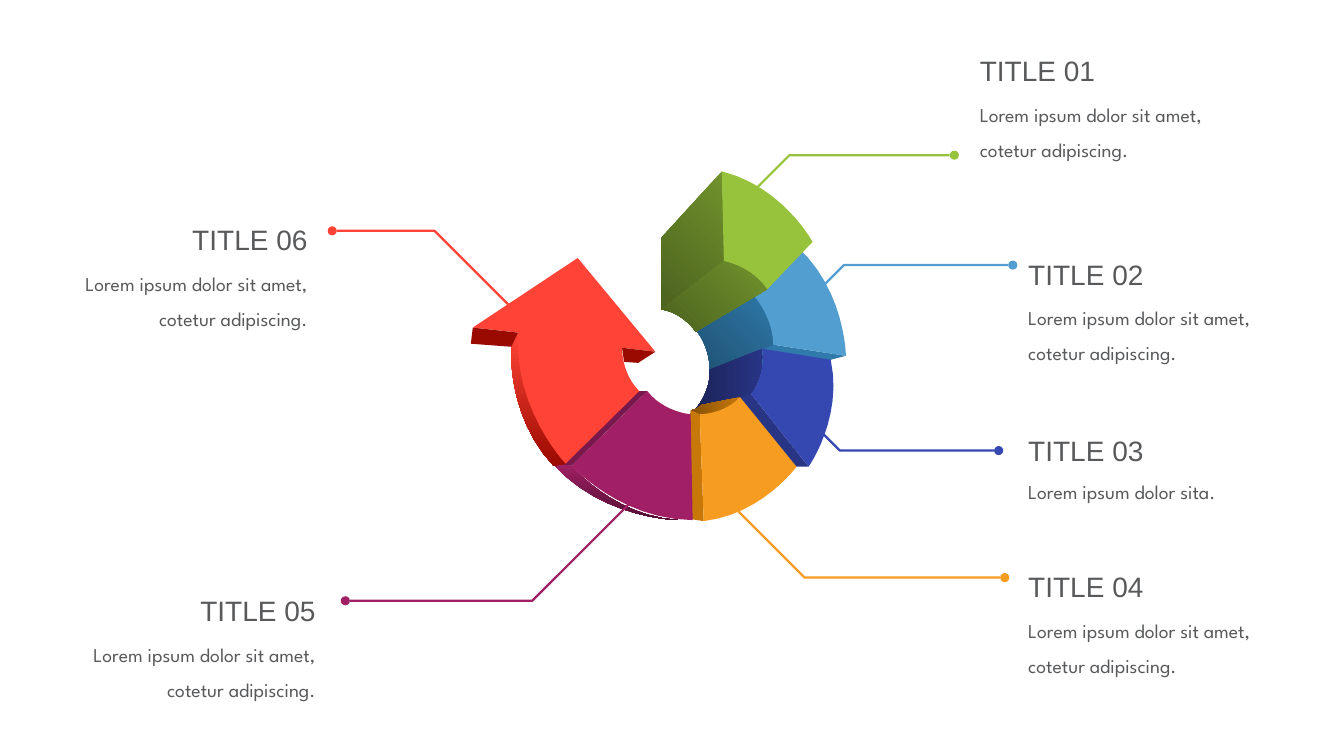
from math import copysign, hypot

from pptx import Presentation
from pptx.dml.color import RGBColor
from pptx.enum.shapes import MSO_SHAPE
from pptx.enum.text import MSO_ANCHOR, PP_ALIGN
from pptx.util import Cm, Pt

GREEN = RGBColor.from_string("97C33C")
GREEN_SHADE = RGBColor.from_string("71922D")
GREEN_DEEP = RGBColor.from_string("4C621E")
SKY = RGBColor.from_string("539ED0")
SKY_SHADE = RGBColor.from_string("2F7AAB")
SKY_DEEP = RGBColor.from_string("1F5172")
BLUE = RGBColor.from_string("3547B1")
BLUE_SHADE = RGBColor.from_string("283585")
BLUE_DEEP = RGBColor.from_string("1B2358")
ORANGE = RGBColor.from_string("F59C21")
ORANGE_SHADE = RGBColor.from_string("C87809")
ORANGE_DEEP = RGBColor.from_string("855006")
PURPLE = RGBColor.from_string("A12065")
PURPLE_SHADE = RGBColor.from_string("79184C")
PURPLE_DEEP = RGBColor.from_string("511033")
RED = RGBColor.from_string("FF4437")
RED_DEEP = RGBColor.from_string("9B0A00")
GREY = RGBColor.from_string("58595B")

RING_CENTER = (6.65, 3.65)
BULGE = 0.22
CURVE_STEPS = 12
DOT = 0.09
TEXT_WIDTH = 2.7
TITLE_HEIGHT = 0.59
BODY_HEIGHT = 0.68
TOP, WELL, FLOOR, WALL = "ab~cd~a", "ae~fd~a", "abge", "fdcg"
DOWN, DIAGONAL, LEFTWARD = 90, 135, 180
LOREM = "Lorem ipsum dolor sit amet, cotetur adipiscing."
SHORT_LOREM = "Lorem ipsum dolor sita."

RING = [
    ([(7.67, 3.42), (8.39, 3.53), (7.9, 2.44), (7.41, 2.86),
      (7.04, 3.67), (6.87, 3.24), (7.03, 3.89)],
     [(FLOOR, SKY_SHADE), (WELL, SKY_SHADE, SKY_DEEP, DIAGONAL), (TOP, SKY)]),
    ([(7.45, 3.91), (8.02, 4.63), (8.24, 3.57), (7.56, 3.46),
      (6.88, 4.08), (7.04, 3.67), (7.26, 4.63)],
     [(FLOOR, BLUE_SHADE), (WELL, BLUE_SHADE, BLUE_DEEP, LEFTWARD), (TOP, BLUE)]),
    ([(7.34, 3.94), (7.9, 4.63), (6.98, 5.17), (6.94, 4.11),
      (6.95, 4.02), (6.85, 4.07), (6.72, 5.13)],
     [(WELL, ORANGE_SHADE, ORANGE_DEEP, LEFTWARD), (WALL, ORANGE_SHADE), (TOP, ORANGE)]),
    ([(6.42, 3.88), (5.67, 4.62), (6.87, 5.16), (6.85, 4.11),
      (5.48, 4.6), (6.31, 3.88), (6.73, 5.16)],
     [(TOP, PURPLE), ("g~eb~g", PURPLE, PURPLE_DEEP, DOWN), ("ebaf", PURPLE_SHADE)]),
    ([(6.34, 3.88), (5.61, 4.6), (5.14, 3.3), (6.17, 3.45),
      (5.07, 3.44), (5.49, 4.62), (4.67, 3.41),
      (4.69, 3.25), (5.73, 2.56), (6.5, 3.49), (6.33, 3.6), (6.19, 3.59)],
     [("ce~fb~c", RED, RED_DEEP, DOWN), ("ab~chijd~a", RED),
      ("djkl", RED_DEEP), ("hgec", RED_DEEP)]),
    ([(7.61, 2.87), (8.06, 2.4), (7.16, 1.7), (7.18, 2.59),
      (6.9, 3.29), (6.56, 3.07), (6.56, 2.36)],
     [(WALL, GREEN_SHADE, GREEN_DEEP, DIAGONAL),
      (WELL, GREEN_SHADE, GREEN_DEEP, DIAGONAL), (TOP, GREEN)]),
]

CALLOUTS = [
    (LOREM, GREEN, (7.49, 1.88), (9.42, 1.54), (9.62, 0.32)),
    (LOREM, SKY, (7.95, 3.05), (10, 2.63), (10.1, 2.34)),
    (SHORT_LOREM, BLUE, (7.91, 4.05), (9.86, 4.47), (10.1, 4.09)),
    (LOREM, ORANGE, (7.17, 4.92), (9.92, 5.73), (10.1, 5.44)),
    (LOREM, PURPLE, (6.33, 4.91), (3.47, 5.96), (0.53, 5.68)),
    (LOREM, RED, (5.12, 3.1), (3.34, 2.29), (0.45, 2)),
]


def length(inches):
    return Cm(inches * 2.54)


def bend(start, end):
    (x1, y1), (x2, y2) = start, end
    mid_x, mid_y = (x1 + x2) / 2, (y1 + y2) / 2
    normal_x, normal_y = y2 - y1, x1 - x2
    outward = normal_x * (mid_x - RING_CENTER[0]) + normal_y * (mid_y - RING_CENTER[1])
    reach = copysign(BULGE, outward)
    control = (mid_x + reach * normal_x, mid_y + reach * normal_y)
    for step in range(1, CURVE_STEPS + 1):
        t = step / CURVE_STEPS
        weights = ((1 - t) ** 2 * (1 + 2 * t), 3 * t ** 2 * (1 - t), t ** 3)
        yield tuple(sum(w * v for w, v in zip(weights, axis))
                    for axis in zip(start, control, end))


def trace(edges, corners):
    outline, curved = [], False
    for mark in edges:
        if mark == "~":
            curved = True
            continue
        corner = corners[ord(mark) - ord("a")]
        outline.extend(bend(outline[-1], corner) if curved else [corner])
        curved = False
    return outline


def add_outline(slide, outline, close):
    points = [(length(x), length(y)) for x, y in outline]
    builder = slide.shapes.build_freeform(*points[0])
    builder.add_line_segments(points[1:], close=close)
    shape = builder.convert_to_shape()
    shape.shadow.inherit = False
    return shape


def add_facet(slide, corners, edges, color, deep=None, angle=0):
    facet = add_outline(slide, trace(edges, corners), True)
    facet.line.fill.background()
    if deep is None:
        facet.fill.solid()
        facet.fill.fore_color.rgb = color
    else:
        facet.fill.gradient()
        facet.fill.gradient_angle = 360 - angle
        for stop, shade in zip(facet.fill.gradient_stops, (color, deep)):
            stop.color.rgb = shade
    return facet


def add_leader(slide, color, start, end):
    direction = copysign(1, end[0] - start[0])
    knee = (start[0] + direction * abs(end[1] - start[1]), end[1])
    leader = add_outline(slide, [start, knee, end], False)
    leader.fill.background()
    leader.line.color.rgb = color
    leader.line.width = Pt(1.6)
    center_x = end[0] + direction * DOT / 2
    dot = slide.shapes.add_shape(
        MSO_SHAPE.OVAL, length(center_x - DOT / 2), length(end[1] - DOT / 2),
        length(DOT), length(DOT))
    dot.shadow.inherit = False
    dot.fill.solid()
    dot.fill.fore_color.rgb = color
    dot.line.fill.background()
    slide.shapes.add_group_shape([leader, dot])


def add_text(slide, text, *, x, y, height, font, size, align):
    frame = slide.shapes.add_textbox(
        length(x), length(y), length(TEXT_WIDTH), length(height)).text_frame
    frame.word_wrap = True
    frame.vertical_anchor = MSO_ANCHOR.MIDDLE
    paragraph = frame.paragraphs[0]
    paragraph.alignment = align
    paragraph.line_spacing = 1.5
    run = paragraph.add_run()
    run.text = text
    run.font.name = font
    run.font.size = Pt(size)
    run.font.color.rgb = GREY


def add_callout(slide, number, body, color, start, end, corner):
    align = PP_ALIGN.RIGHT if end[0] < start[0] else PP_ALIGN.LEFT
    x, y = corner
    body_y = y + TITLE_HEIGHT - (0.2 if body == SHORT_LOREM else 0)
    add_leader(slide, color, start, end)
    add_text(slide, body, x=x, y=body_y, height=BODY_HEIGHT,
             font="League Spartan", size=14, align=align)
    add_text(slide, f"TITLE {number:02}", x=x, y=y, height=TITLE_HEIGHT,
             font="Arial", size=20, align=align)


def main():
    deck = Presentation()
    deck.slide_width, deck.slide_height = length(13.33), length(7.5)
    slide = deck.slides.add_slide(deck.slide_layouts[6])
    for corners, facets in RING:
        slide.shapes.add_group_shape([add_facet(slide, corners, *facet) for facet in facets])
    for number, callout in enumerate(CALLOUTS, 1):
        add_callout(slide, number, *callout)
    deck.save("out.pptx")


if __name__ == "__main__":
    main()
